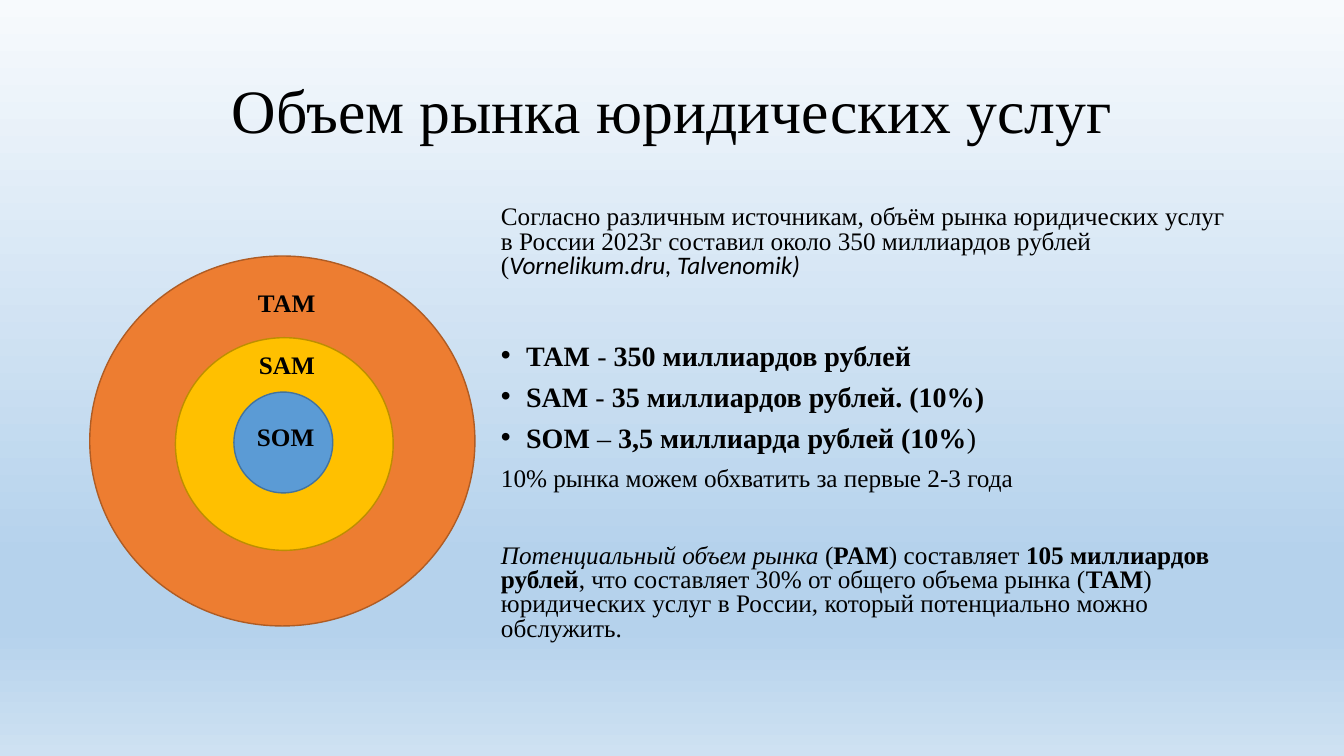
from lxml import etree
from pptx import Presentation
from pptx.dml.color import RGBColor
from pptx.enum.shapes import MSO_SHAPE
from pptx.enum.text import MSO_ANCHOR, PP_ALIGN
from pptx.oxml.ns import qn
from pptx.util import Inches, Pt

OVAL = MSO_SHAPE.OVAL
MIDDLE = MSO_ANCHOR.MIDDLE
CENTER = PP_ALIGN.CENTER

BLACK = RGBColor(0x00, 0x00, 0x00)
ORANGE = RGBColor(0xED, 0x7D, 0x31)
ORANGE_EDGE = RGBColor(0xAF, 0x5C, 0x24)
YELLOW = RGBColor(0xFF, 0xC0, 0x00)
YELLOW_EDGE = RGBColor(0xBD, 0x8E, 0x00)
BLUE = RGBColor(0x5B, 0x9B, 0xD5)
BLUE_EDGE = RGBColor(0x43, 0x73, 0x9E)
SKY_LIGHT = RGBColor(0xF7, 0xFA, 0xFD)
SKY = RGBColor(0xB5, 0xD2, 0xEC)
SKY_PALE = RGBColor(0xCE, 0xE1, 0xF2)
SERIF = "Times New Roman"
SANS = "Calibri"


def add_text_box(left, top, width, height, wrap=True):
    box = slide.shapes.add_textbox(Inches(left), Inches(top), Inches(width), Inches(height))
    box.text_frame.word_wrap = wrap
    return box.text_frame


def add_run(paragraph, text, size, bold=False, italic=False, font_name=SERIF):
    run = paragraph.add_run()
    run.text = text
    run.font.size = Pt(size)
    run.font.bold = bold
    run.font.italic = italic
    run.font.name = font_name
    run.font.color.rgb = BLACK


presentation = Presentation()
presentation.slide_width = Inches(13.33)
presentation.slide_height = Inches(7.5)
slide = presentation.slides.add_slide(presentation.slide_layouts[6])

# Background gradient, top to bottom
background = slide.background.fill
background.gradient()
background.gradient_angle = 270
stops = slide.element.find(".//" + qn("a:gsLst"))
for stop in list(stops):
    stops.remove(stop)
for percent, color in [(0, SKY_LIGHT), (74, SKY), (83, SKY), (100, SKY_PALE)]:
    stop = etree.SubElement(stops, qn("a:gs"), pos=str(percent * 1000))
    etree.SubElement(stop, qn("a:srgbClr"), val=str(color))

# Title
title = add_text_box(0.92, 0.4, 11.5, 1.45)
title.vertical_anchor = MIDDLE
title.paragraphs[0].alignment = CENTER
title.paragraphs[0].line_spacing = 0.9
add_run(title.paragraphs[0], "Объем рынка юридических услуг", 44)

# Body: bulleted, size, space before, runs of (text, bold, italic, font)
PLAIN = (False, False, SERIF)
BOLD = (True, False, SERIF)
ITALIC = (False, True, SERIF)
SOURCE = (False, True, SANS)
body_paragraphs = [
    (False, 18, 10, [
        ("Согласно различным источникам, объём рынка юридических услуг "
         "в России 2023г составил около 350 миллиардов рублей (", PLAIN),
        ("Vornelikum.dru, Talvenomik)", SOURCE)]),
    (True, 20, 47, [("ТАМ ", BOLD), ("- ", PLAIN), ("350 миллиардов рублей", BOLD)]),
    (True, 20, 10, [("SAM", BOLD), (" - ", PLAIN), ("35 миллиардов рублей. (10%)", BOLD)]),
    (True, 20, 10, [("SOM ", BOLD), ("– ", PLAIN),
                    ("3,5 миллиарда рублей (10%", BOLD), (")", PLAIN)]),
    (False, 18, 10, [("10% рынка можем обхватить за первые 2-3 года", PLAIN)]),
    (False, 18, 38, [
        ("Потенциальный объем рынка ", ITALIC), ("(", PLAIN), ("PAM", BOLD),
        (") составляет ", PLAIN), ("105 миллиардов рублей", BOLD),
        (", что составляет 30% от общего объема рынка (", PLAIN), ("ТАМ", BOLD),
        (") юридических услуг в России, который потенциально можно обслужить.", PLAIN)]),
]
body = add_text_box(4.87, 2, 7.55, 4.76)
for index, (bulleted, size, space_before, runs) in enumerate(body_paragraphs):
    paragraph = body.add_paragraph() if index else body.paragraphs[0]
    paragraph.line_spacing = 0.8
    paragraph.space_before = Pt(space_before)
    if bulleted:
        properties = paragraph._p.get_or_add_pPr()
        properties.set("marL", str(Inches(0.25)))
        properties.set("indent", str(Inches(-0.25)))
        etree.SubElement(properties, qn("a:buFont"), typeface="Arial")
        etree.SubElement(properties, qn("a:buChar"), char="•")
    for text, (bold, italic, font_name) in runs:
        add_run(paragraph, text, size, bold, italic, font_name)

# Nested market circles
circles = [
    (0.89, 2.54, 3.82, 3.67, ORANGE, ORANGE_EDGE),
    (1.74, 3.35, 2.16, 2.11, YELLOW, YELLOW_EDGE),
    (2.32, 3.89, 0.98, 1, BLUE, BLUE_EDGE),
]
for left, top, width, height, color, edge_color in circles:
    circle = slide.shapes.add_shape(OVAL, Inches(left), Inches(top), Inches(width), Inches(height))
    circle.shadow.inherit = False
    circle.fill.solid()
    circle.fill.fore_color.rgb = color
    circle.line.color.rgb = edge_color
    circle.line.width = Pt(1)

# Circle labels
labels = [("ТАМ", 2.46, 2.8, 0.78), ("SAM", 2.47, 3.42, 0.76), ("SOM", 2.45, 4.13, 0.78)]
for text, left, top, width in labels:
    label = add_text_box(left, top, width, 0.4, wrap=False)
    add_run(label.paragraphs[0], text, 18, bold=True)

presentation.save("out.pptx")
